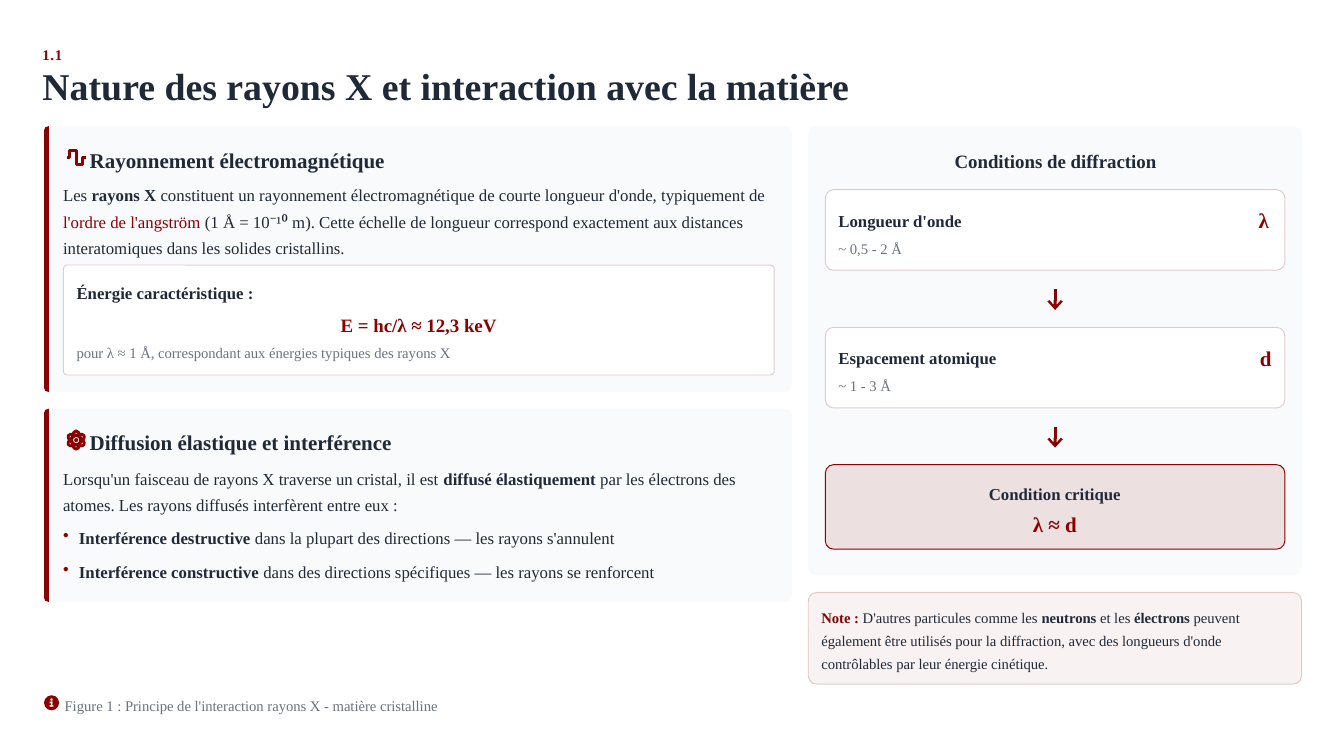
from pptx import Presentation
from pptx.dml.color import RGBColor
from pptx.enum.shapes import MSO_CONNECTOR, MSO_SHAPE
from pptx.enum.text import MSO_ANCHOR, MSO_AUTO_SIZE, PP_ALIGN
from pptx.oxml import parse_xml
from pptx.oxml.ns import nsdecls
from pptx.oxml.xmlchemy import OxmlElement
from pptx.util import Cm, Pt

RED, INK, GREY, PALE, WHITE = "8B0000", "1F2937", "6B7280", "F9FAFB", "FFFFFF"
LEFT, CENTER = PP_ALIGN.LEFT, PP_ALIGN.CENTER


def paint(shape, fill=None, line=None, width=0.67, fill_alpha=100, line_alpha=100):
    shape.shadow.inherit = False
    for part, colour, alpha in ((shape.fill, fill, fill_alpha), (shape.line.fill, line, line_alpha)):
        if colour is None:
            part.background()
            continue
        part.solid()
        part.fore_color.rgb = RGBColor.from_string(colour)
        if alpha < 100:
            holder = "a:ln/" if part is not shape.fill else ""
            for node in shape._element.spPr.xpath(f"{holder}a:solidFill/a:srgbClr"):
                node.append(parse_xml(f'<a:alpha {nsdecls("a")} val="{alpha * 1000}"/>'))
    if line:
        shape.line.width = Pt(width)


def write(box, place, paragraphs, size, spacing=1.3, align=LEFT, bullets=False):
    box.left, box.top, box.width, box.height = map(Cm, place)
    frame = box.text_frame
    layout = {"word_wrap": True, "auto_size": MSO_AUTO_SIZE.NONE, "vertical_anchor": MSO_ANCHOR.MIDDLE,
              "margin_left": 0, "margin_top": 0, "margin_right": 0, "margin_bottom": 0}
    for name, value in layout.items():
        setattr(frame, name, value)
    for index, spans in enumerate(paragraphs):
        para = frame.add_paragraph() if index else frame.paragraphs[0]
        para.alignment, para.line_spacing = align, spacing
        if index:
            para.space_before = Pt(6)
        if bullets:
            properties = para._p.get_or_add_pPr()
            properties.set("marL", str(Cm(0.4)))
            properties.set("indent", str(-Cm(0.4)))
            properties.append(parse_xml(
                f'<a:buClr {nsdecls("a")}><a:srgbClr val="{RED}"/></a:buClr>'))
            properties.append(parse_xml(f'<a:buChar {nsdecls("a")} char="•"/>'))
        for text, colour, bold in spans:
            span = para.add_run()
            span.text = text
            for name, value in {"name": "Times New Roman", "size": Pt(size), "bold": bold}.items():
                setattr(span.font, name, value)
            span.font.color.rgb = RGBColor.from_string(colour)
    return frame


deck = Presentation()
deck.slide_width, deck.slide_height = Cm(33.87), Cm(19.05)
page = deck.slides.add_slide(deck.slide_layouts[5])
shapes = page.shapes

write(shapes.title, (1.07, 1.7, 32.23, 1.07),
      [[("Nature des rayons X et interaction avec la matière", INK, True)]], 27, 0.9)
number = write(shapes.add_textbox(0, 0, 0, 0), (1.07, 1.07, 31.93, 0.53), [[("1.1", RED, True)]], 10.5, 1.2)
number.paragraphs[0].runs[0]._r.get_or_add_rPr().set("spc", "50")

steps = [
    (4.78, "Longueur d'onde", "λ", 31.72, "~ 0,5 - 2 Å"),
    (8.25, "Espacement atomique", "d", 31.75, "~ 1 - 3 Å"),
]
step_style = {"fill": WHITE, "line": RED, "line_alpha": 20}
panels = [
    ((1.11, 3.18, 18.85, 6.7), 0.21, {"fill": PALE}),
    ((1.11, 10.3, 18.85, 4.87), 0.21, {"fill": PALE}),
    ((1.6, 6.68, 17.91, 2.77), 0.1, step_style),
    ((20.37, 3.18, 12.43, 11.32), 0.21, {"fill": PALE}),
    *[((20.8, top, 11.58, 2.03), 0.21, step_style) for top, *_ in steps],
    ((20.8, 11.71, 11.58, 2.13), 0.21, {"fill": RED, "line": RED, "fill_alpha": 10}),
    ((20.37, 14.93, 12.43, 2.31), 0.21, {"fill": RED, "line": RED, "fill_alpha": 5, "line_alpha": 20}),
]
for place, radius, style in panels:
    panel = shapes.add_shape(MSO_SHAPE.ROUNDED_RECTANGLE, *map(Cm, place))
    panel.adjustments[0] = radius / min(place[2:])
    paint(panel, **style)

for top, height in ((3.18, 6.7), (10.3, 4.87)):
    left, right, bottom = 1.11, 1.23, top + height
    outline = [(right, bottom), (left + 0.03, bottom - 0.03), (left, bottom - 0.11),
               (left, top + 0.11), (left + 0.03, top + 0.03)]
    builder = shapes.build_freeform(Cm(right), Cm(top))
    builder.add_line_segments([(Cm(x), Cm(y)) for x, y in outline])
    paint(builder.convert_to_shape(), RED)

wave = [(1.76, 3.96), (1.76, 3.8), (1.92, 3.8), (1.92, 4.14), (2.08, 4.14), (2.08, 3.96), (2.16, 3.96)]
builder = shapes.build_freeform(Cm(1.69), Cm(3.96))
builder.add_line_segments([(Cm(x), Cm(y)) for x, y in wave], close=False)
paint(builder.convert_to_shape(), line=RED, width=2)

for angle in (0, 60, 120):
    orbit = shapes.add_shape(MSO_SHAPE.OVAL, Cm(1.81), Cm(10.86), Cm(0.22), Cm(0.46))
    orbit.rotation = angle
    paint(orbit, line=RED, width=2)

dots = [
    (MSO_SHAPE.OVAL, (1.87, 11.04, 0.1, 0.1), RED),
    (MSO_SHAPE.OVAL, (1.11, 17.52, 0.38, 0.38), RED),
    (MSO_SHAPE.OVAL, (1.27, 17.6, 0.06, 0.06), WHITE),
    (MSO_SHAPE.RECTANGLE, (1.25, 17.68, 0.07, 0.04), WHITE),
    (MSO_SHAPE.RECTANGLE, (1.28, 17.68, 0.04, 0.12), WHITE),
    (MSO_SHAPE.RECTANGLE, (1.25, 17.77, 0.1, 0.04), WHITE),
]
for kind, place, colour in dots:
    paint(shapes.add_shape(kind, *map(Cm, place)), colour)

texts = [
    ((2.26, 3.61, 17.55, 0.74), [[("Rayonnement électromagnétique", INK, True)]], 15, 1.2),
    ((1.59, 4.55, 18.16, 1.91), [[
        ("Les ", INK, False), ("rayons X", INK, True),
        (" constituent un rayonnement électromagnétique de courte longueur d'onde, typiquement de ", INK, False),
        ("l'ordre de l'angström ", RED, False),
        ("(1 Å = 10⁻¹⁰ m). Cette échelle de longueur correspond exactement aux distances "
         "interatomiques dans les solides cristallins.", INK, False)]], 12),
    ((1.93, 7.01, 8, 0.61), [[("Énergie caractéristique :", INK, True)]], 12),
    ((7.6, 7.77, 5.9, 0.69), [[("E = hc/λ ≈ 12,3 keV", RED, True)]], 13.5, 1.3, CENTER),
    ((1.93, 8.59, 17.42, 0.53),
     [[("pour λ ≈ 1 Å, correspondant aux énergies typiques des rayons X", GREY, False)]], 10.5, 1.2),
    ((2.26, 10.72, 17.55, 0.74), [[("Diffusion élastique et interférence", INK, True)]], 15, 1.2),
    ((1.59, 11.68, 18.16, 1.27), [[
        ("Lorsqu'un faisceau de rayons X traverse un cristal, il est ", INK, False),
        ("diffusé élastiquement", INK, True),
        (" par les électrons des atomes. Les rayons diffusés interfèrent entre eux :", INK, False)]], 12),
    ((1.59, 13.16, 18.16, 1.48), [
        [("Interférence destructive", INK, True),
         (" dans la plupart des directions — les rayons s'annulent", INK, False)],
        [("Interférence constructive", INK, True),
         (" dans des directions spécifiques — les rayons se renforcent", INK, False)]], 12, 1.3, LEFT, True),
    ((20.68, 3.61, 11.84, 0.74), [[("Conditions de diffraction", INK, True)]], 13.5, 1.3, CENTER),
    ((21.01, 12.04, 11.15, 0.64), [[("Condition critique", INK, True)]], 12, 1.3, CENTER),
    ((21.01, 12.78, 11.15, 0.74), [[("λ ≈ d", RED, True)]], 15, 1.2, CENTER),
    ((20.7, 15.24, 11.96, 1.68), [[
        ("Note :", RED, True), (" D'autres particules comme les ", INK, False),
        ("neutrons", INK, True), (" et les ", INK, False), ("électrons", INK, True),
        (" peuvent également être utilisés pour la diffraction, avec des longueurs d'onde "
         "contrôlables par leur énergie cinétique.", INK, False)]], 10.5),
    ((1.63, 17.48, 31.37, 0.53),
     [[("Figure 1 : Principe de l'interaction rayons X - matière cristalline", GREY, False)]], 10.5, 1.2),
]
for top, label, symbol, symbol_left, span_range in steps:
    texts += [
        ((21.13, top + 0.38, 8, 0.64), [[(label, INK, True)]], 12),
        ((symbol_left, top + 0.33, 0.6, 0.74), [[(symbol, RED, True)]], 15, 1.2),
        ((21.13, top + 1.17, 11.13, 0.53), [[(span_range, GREY, False)]], 10.5, 1.2),
    ]
    arrow = shapes.add_connector(MSO_CONNECTOR.STRAIGHT, Cm(26.59), Cm(top + 2.5), Cm(26.59), Cm(top + 3.03))
    arrow.line.color.rgb = RGBColor.from_string(RED)
    arrow.line.width = Pt(2)
    arrow.line._get_or_add_ln().append(
        parse_xml(f'<a:tailEnd {nsdecls("a")} type="arrow" w="lg" len="med"/>'))
    arrow._element.spPr.append(OxmlElement("a:effectLst"))

for text in texts:
    write(shapes.add_textbox(0, 0, 0, 0), *text)

deck.save("out.pptx")
